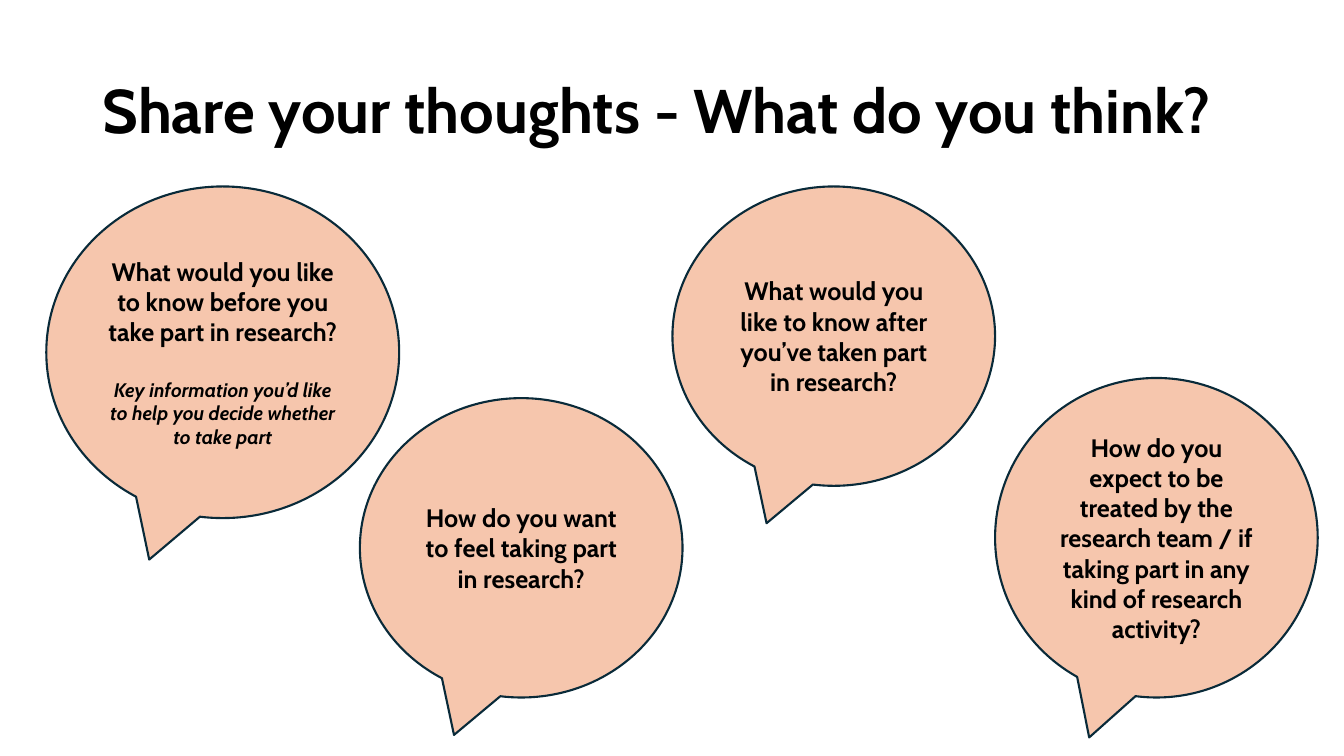
from pptx import Presentation
from pptx.dml.color import RGBColor
from pptx.enum.shapes import MSO_SHAPE
from pptx.enum.text import MSO_ANCHOR, PP_ALIGN
from pptx.util import Inches, Pt


def color(hex_code):
    return RGBColor.from_string(hex_code)


class ThoughtsSlide:
    FONT = "Cabin"
    TEXT = "000000"
    BUBBLE_FILL = "F6C6AD"
    BUBBLE_LINE = "092A39"

    def __init__(self, presentation):
        self.slide = presentation.slides.add_slide(presentation.slide_layouts[6])

    def style(self, paragraph, size, italic=False):
        for run in paragraph.runs:
            run.font.name = self.FONT
            run.font.size = Pt(size)
            run.font.bold = True
            run.font.italic = italic
            run.font.color.rgb = color(self.TEXT)

    def title(self, text, left, top, width, height):
        box = self.slide.shapes.add_textbox(
            Inches(left), Inches(top), Inches(width), Inches(height))
        frame = box.text_frame
        frame.word_wrap = True
        frame.vertical_anchor = MSO_ANCHOR.MIDDLE
        frame.text = text
        frame.paragraphs[0].line_spacing = 0.9
        self.style(frame.paragraphs[0], 44)

    def bubble(self, question, left, top, width, height, hint=None):
        """Add a speech bubble with a question and an optional italic hint."""
        callout = self.slide.shapes.add_shape(
            MSO_SHAPE.OVAL_CALLOUT,
            Inches(left), Inches(top), Inches(width), Inches(height))
        callout.shadow.inherit = False
        callout.fill.solid()
        callout.fill.fore_color.rgb = color(self.BUBBLE_FILL)
        callout.line.color.rgb = color(self.BUBBLE_LINE)
        callout.line.width = Pt(1.5)
        frame = callout.text_frame
        frame.word_wrap = True
        frame.vertical_anchor = MSO_ANCHOR.MIDDLE
        frame.text = question
        self.style(frame.paragraphs[0], 18)
        if hint:
            hint_line = frame.add_paragraph()
            hint_line.text = hint
            hint_line.space_before = Pt(22)
            self.style(hint_line, 14, italic=True)
        for paragraph in frame.paragraphs:
            paragraph.alignment = PP_ALIGN.CENTER


def main():
    presentation = Presentation()
    presentation.slide_width = Inches(13.33)
    presentation.slide_height = Inches(7.5)

    thoughts = ThoughtsSlide(presentation)
    thoughts.title("Share your thoughts - What do you think?", 0.92, 0.4, 11.5, 1.45)
    thoughts.bubble(
        "What would you like to know before you take part in research?",
        0.46, 1.85, 3.5, 3.29,
        hint="Key information you’d like to help you decide whether to take part")
    thoughts.bubble("How do you want to feel taking part in research?",
                    3.57, 3.95, 3.2, 2.97)
    thoughts.bubble("What would you like to know after you’ve taken part in research?",
                    6.67, 1.85, 3.2, 2.97)
    thoughts.bubble("How do you expect to be treated by the research team / "
                    "if taking part in any kind of research activity?",
                    9.87, 3.75, 3.2, 3.17)
    presentation.save("out.pptx")


if __name__ == "__main__":
    main()
